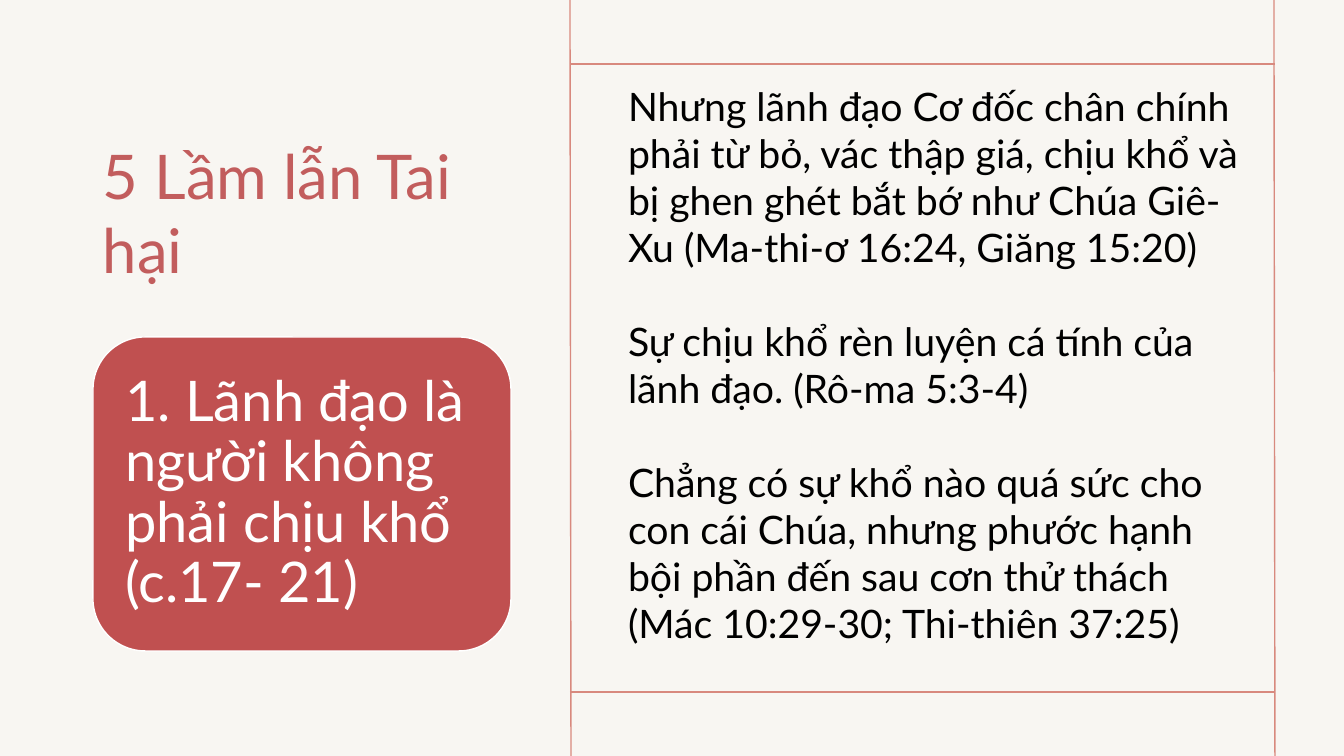
from pptx import Presentation
from pptx.dml.color import RGBColor
from pptx.enum.shapes import MSO_CONNECTOR, MSO_SHAPE
from pptx.enum.text import MSO_ANCHOR, PP_ALIGN
from pptx.oxml.ns import qn
from pptx.util import Emu, Pt
from lxml import etree

LINE = MSO_CONNECTOR.STRAIGHT
ROUNDED = MSO_SHAPE.ROUNDED_RECTANGLE
TOP, MIDDLE, BOTTOM = MSO_ANCHOR.TOP, MSO_ANCHOR.MIDDLE, MSO_ANCHOR.BOTTOM
LEFT = PP_ALIGN.LEFT

WIDTH, HEIGHT = 1344, 756
FONT = "Lato"
CREAM, ROSE, RED = "F8F6F2", "C25D5D", "C05050"
SALMON, WHITE, BLACK = "D8897E", "FFFFFF", "000000"

TITLE = "5 Lầm lẫn Tai hại"
MISTAKE = "1. Lãnh đạo là người không phải chịu khổ (c.17- 21)"
ANSWERS = [
    "Nhưng lãnh đạo Cơ đốc chân chính phải từ bỏ, vác thập giá, chịu khổ và "
    "bị ghen ghét bắt bớ như Chúa Giê-Xu (Ma-thi-ơ 16:24, Giăng 15:20)",
    "Sự chịu khổ rèn luyện cá tính của lãnh đạo. (Rô-ma 5:3-4)",
    "Chẳng có sự khổ nào quá sức cho con cái Chúa, nhưng phước hạnh bội phần "
    "đến sau cơn thử thách (Mác 10:29-30; Thi-thiên 37:25)",
]


def px(length):
    """Turn px into EMU at 100.8 px to the inch."""
    return Emu(round(length * 914400 / 100.8))


def color(value):
    """Return the colour of a hex string."""
    return RGBColor.from_string(value)


def write(shape, texts, size, ink, anchor, inset=(10, 5), gap=0, spacing=1.0):
    """Fill a shape with paragraphs in one style."""
    frame = shape.text_frame
    across, down = map(px, inset)
    frame_format = {"word_wrap": True, "vertical_anchor": anchor,
                    "margin_left": across, "margin_right": across,
                    "margin_top": down, "margin_bottom": down}
    for name, value in frame_format.items():
        setattr(frame, name, value)
    for index, text in enumerate(texts):
        para = frame.add_paragraph() if index else frame.paragraphs[0]
        para_format = {"alignment": LEFT, "line_spacing": spacing,
                       "space_before": Pt(gap if index else 0)}
        for name, value in para_format.items():
            setattr(para, name, value)
        span = para.add_run()
        span.text = text
        for name, value in {"name": FONT, "size": Pt(size)}.items():
            setattr(span.font, name, value)
        span.font.color.rgb = color(ink)


def add_rule(page, start, end):
    """Draw one thin line of the frame."""
    rule = page.shapes.add_connector(LINE, *map(px, start + end))
    rule.line.color.rgb = color(SALMON)
    rule.line.width = Pt(1)
    etree.SubElement(rule._element.spPr, qn("a:effectLst"))


def add_frame(page, box):
    """Draw uprights over the full page height and rails across the box."""
    left, top, width, height = box
    for x in (left, left + width - 1):
        add_rule(page, (x, 0), (x + 1, HEIGHT))
    for y in (top, top + height):
        add_rule(page, (left, y), (left + width, y))


def add_title(page, box):
    """Place the title at the bottom of its box."""
    write(page.shapes.add_textbox(*map(px, box)), [TITLE], 44, ROSE, BOTTOM)


def add_mistake(page, box):
    """Place the rounded card that names the mistake."""
    card = page.shapes.add_shape(ROUNDED, *map(px, box))
    card.shadow.inherit = False
    card.fill.solid()
    card.fill.fore_color.rgb = color(RED)
    card.line.color.rgb = color(WHITE)
    card.line.width = Pt(1)
    write(card, [MISTAKE], 40, WHITE, MIDDLE, inset=(17, 17), spacing=0.9)


def add_answers(page, box):
    """Place the answers, one blank line's height apart."""
    write(page.shapes.add_textbox(*map(px, box)), ANSWERS, 28, BLACK, TOP,
          gap=33.6)


def main():
    """Build and save the deck."""
    deck = Presentation()
    deck.slide_width, deck.slide_height = px(WIDTH), px(HEIGHT)
    page = deck.slides.add_slide(deck.slide_layouts[6])
    page.background.fill.solid()
    page.background.fill.fore_color.rgb = color(CREAM)
    add_title(page, (93, 81, 418, 210))
    add_frame(page, (570, 64, 705, 628))
    add_mistake(page, (93, 337, 418, 314))
    add_answers(page, (618, 77, 633, 580))
    deck.save("out.pptx")


if __name__ == "__main__":
    main()
